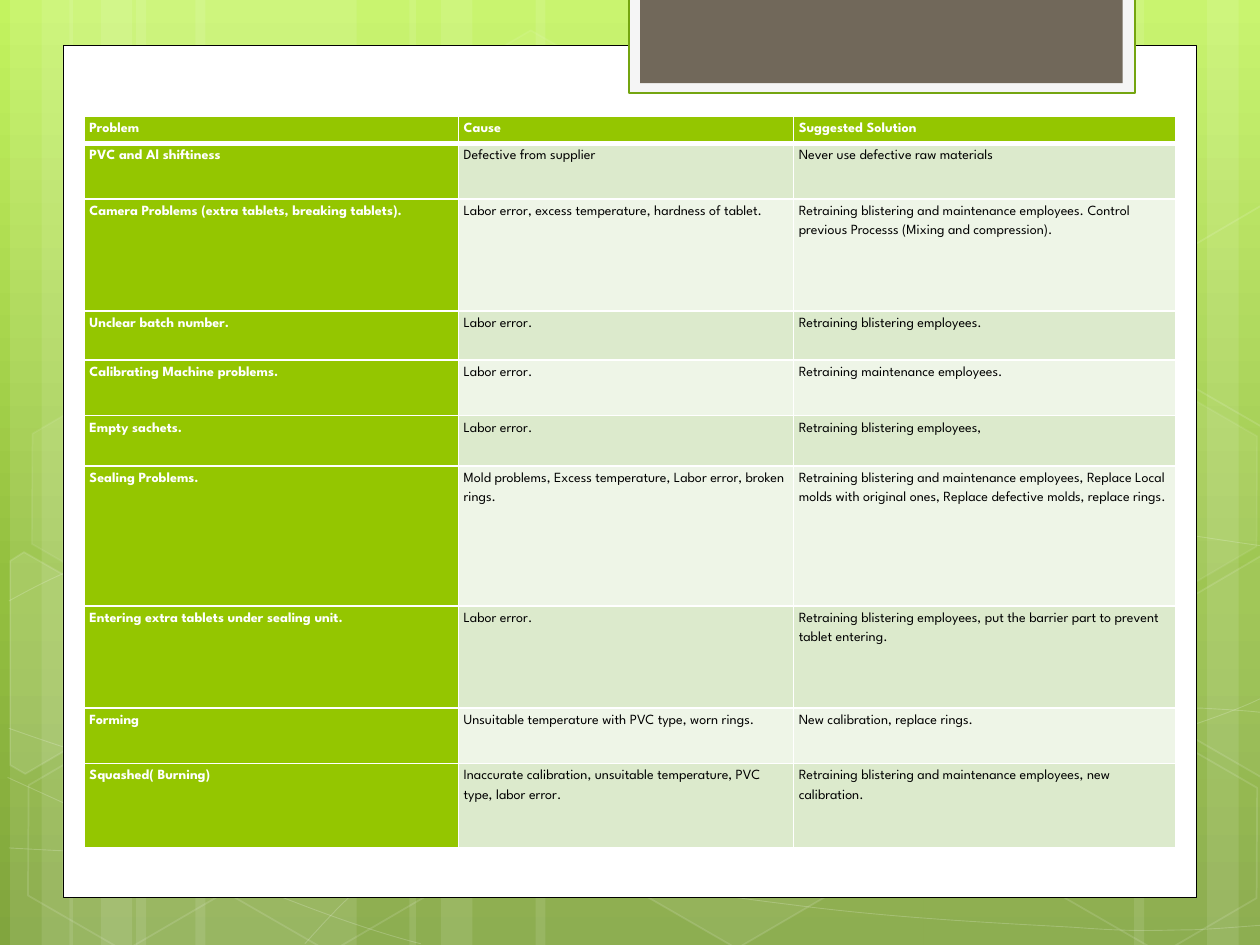
from dataclasses import dataclass
from math import cos, radians, sin

from lxml import etree
from pptx import Presentation
from pptx.dml.color import RGBColor
from pptx.enum.shapes import MSO_SHAPE
from pptx.oxml.ns import qn
from pptx.util import Inches, Pt

RECT, HEXAGON = MSO_SHAPE.RECTANGLE, MSO_SHAPE.HEXAGON
FONT = "League Spartan"
WHITE, BLACK, GREEN = "FFFFFF", "000000", "94C600"
BANDS = ("DCEACC", "EEF5E7")
BACKGROUND = ((0, "C3F35F"), (62, "93BF3F"), (100, "81A53E"))
TILT = 30


@dataclass
class Hexagon:
    left: float
    top: float
    fill: int  # opacity in percent, 0 for no fill
    line: int


@dataclass
class CutHexagon:
    center: tuple
    points: list  # corners as seen on the slide
    fill: int


@dataclass
class Curve:
    points: list  # start, then two control points and an end point per segment
    straight: int = 0  # index of an end point reached by a straight line


# Vertical light bars: left, width, rotation
BARS = [(1.08, 1.75, 0), (0.08, 0.5, 0), (0.33, 0.83, 0), (1.55, 1.75, 0), (0.55, 0.5, 0),
        (0.8, 0.83, 0), (7.33, 1.75, 180), (9.58, 0.5, 180), (9, 0.83, 180),
        (4.25, 3.08, 0), (3.25, 0.5, 0), (3.5, 0.83, 0)]

CURVES = [
    Curve([(0.07, 6.73), (0.61, 6.76), (1.15, 6.79), (1.9, 6.78), (2.65, 6.77), (3.58, 6.75),
           (4.58, 6.65), (5.58, 6.55), (7, 6.36), (7.92, 6.17), (8.83, 5.98), (9.77, 5.68),
           (10.07, 5.51)]),
    Curve([(0.07, 4.77), (0.36, 4.61), (0.65, 4.46), (1.21, 4.31), (1.78, 4.16), (2.59, 3.94),
           (3.47, 3.87), (4.36, 3.8), (5.44, 3.79), (6.54, 3.87), (7.64, 3.95), (9.47, 4.26),
           (10.07, 4.34)]),
    Curve([(0.06, 6.17), (1.27, 6.72), (2.47, 7.27), (3.34, 7.49)]),
    Curve([(0.07, 5.78), (0.38, 5.89), (0.7, 6), (1.28, 6.16), (1.86, 6.31), (2.73, 6.56),
           (3.57, 6.73), (4.4, 6.9), (5.45, 7.08), (6.28, 7.18), (7.11, 7.29), (8, 7.33),
           (8.53, 7.36), (9.05, 7.4), (9.19, 7.38), (9.45, 7.38), (9.71, 7.37), (9.89, 7.35),
           (10.07, 7.34)]),
    Curve([(2.42, 7.49), (2.6, 7.29), (2.78, 7.09), (3.02, 6.91), (3.26, 6.73), (3.6, 6.53),
           (3.88, 6.39), (4.16, 6.25), (4.33, 6.19), (4.7, 6.09), (5.06, 5.99), (5.73, 5.85),
           (6.08, 5.78), (6.44, 5.71), (6.49, 5.71), (6.8, 5.69), (7.11, 5.66), (7.6, 5.63),
           (7.94, 5.62), (8.29, 5.61), (8.86, 5.62), (8.86, 5.62), (9.53, 5.62), (9.71, 5.63),
           (9.88, 5.64), (9.97, 5.65), (10.06, 5.66), (10.03, 5.65), (10.06, 5.66)], 22),
]

# Whole hexagons and those cut by the slide edge, back to front
CELLS = [
    Hexagon(3.34, 0.36, 4, 8),
    Hexagon(4.97, 5.89, 6, 12),
    CutHexagon((0.36, 5.35), [(0.08, 4.45), (0.19, 4.38), (0.96, 4.82), (0.95, 5.7),
                              (0.2, 6.14), (0.08, 6.07)], 10),
    Hexagon(0.11, 5.91, 0, 12),
    Hexagon(0.14, 3.12, 7, 8),
    Hexagon(1.74, 5.92, 0, 12),
    Hexagon(7.53, 4.53, 10, 12),
    Hexagon(8.34, 5.93, 0, 12),
    Hexagon(8.34, 3.14, 7, 8),
    CutHexagon((9.85, 5.2), [(9.26, 4.85), (10.01, 4.41), (10.09, 4.46), (10.09, 6.13),
                             (10.02, 6.17), (9.26, 5.73)], 4),
    CutHexagon((9.85, 2.41), [(9.26, 2.07), (10.01, 1.63), (10.1, 1.68), (10.09, 3.35),
                              (10.02, 3.39), (9.26, 2.95)], 0),
]

COLUMNS = (2.97, 2.66, 3.03)
ROWS = [  # height, cell texts
    (0.22, "Problem", "Cause", "Suggested Solution"),
    (0.44, "PVC and Al shiftiness", "Defective from supplier",
     "Never use defective raw materials"),
    (0.89, "Camera Problems (extra tablets, breaking tablets).",
     "Labor error, excess temperature, hardness of tablet.",
     "Retraining blistering and maintenance employees. Control previous Processs "
     "(Mixing and compression)."),
    (0.39, "Unclear batch number.", "Labor error.", "Retraining blistering employees."),
    (0.44, "Calibrating Machine problems.", "Labor error.",
     "Retraining maintenance employees."),
    (0.4, "Empty sachets.", "Labor error.", "Retraining blistering employees,"),
    (1.11, "Sealing Problems.",
     "Mold problems, Excess temperature, Labor error, broken rings.",
     "Retraining blistering and maintenance employees, Replace Local molds with original "
     "ones, Replace defective molds, replace rings."),
    (0.81, "Entering extra tablets under sealing unit.", "Labor error.",
     "Retraining blistering employees, put the barrier part to prevent tablet entering."),
    (0.44, "Forming", "Unsuitable temperature with PVC type, worn rings.",
     "New calibration, replace rings."),
    (0.67, "Squashed( Burning)",
     "Inaccurate calibration, unsuitable temperature, PVC type, labor error.",
     "Retraining blistering and maintenance employees, new calibration."),
]


def paint(fill, color: str, opacity: int = 100) -> None:
    fill.solid()
    fill.fore_color.rgb = RGBColor.from_string(color)
    if opacity < 100:
        clr = fill._xPr.find(qn("a:solidFill"))[0]
        etree.SubElement(clr, qn("a:alpha")).set("val", str(opacity * 1000))


def style(sp, fill="", fill_opacity=100, line="", width=1.0, line_opacity=100) -> None:
    sp.shadow.inherit = False
    if fill and fill_opacity:
        paint(sp.fill, fill, fill_opacity)
    else:
        sp.fill.background()
    if line:
        sp.line.width = Pt(width)
        paint(sp.line.fill, line, line_opacity)
    else:
        sp.line.fill.background()


def add_box(s, kind, left: float, top: float, width: float, height: float):
    return s.shapes.add_shape(kind, Inches(left), Inches(top), Inches(width), Inches(height))


def add_outline(s, points: list, close: bool):
    emu = [(Inches(x), Inches(y)) for x, y in points]
    builder = s.shapes.build_freeform(*emu[0])
    builder.add_line_segments(emu[1:], close=close)
    return builder.convert_to_shape()


def add_curve(s, curve: Curve) -> None:
    """Draw the points as lines, then join each three into one cubic segment."""
    sp = add_outline(s, curve.points, False)
    lines = list(sp._element.iter(qn("a:lnTo")))
    i = 0
    while i < len(lines):
        if i + 1 == curve.straight:
            i += 1
            continue
        first, *others = lines[i:i + 3]
        first.tag = qn("a:cubicBezTo")
        for ln in others:
            first.append(ln[0])
            ln.getparent().remove(ln)
        i += 3
    style(sp, line=WHITE, width=0.5, line_opacity=20)


def add_cut_hexagon(s, c: CutHexagon) -> None:
    """Turn the corners back, so that the tilt of the shape restores them."""
    (cx, cy), co, si = c.center, cos(radians(TILT)), sin(radians(TILT))
    upright = [(cx + (x - cx) * co + (y - cy) * si, cy - (x - cx) * si + (y - cy) * co)
               for x, y in c.points]
    sp = add_outline(s, upright, True)
    sp.rotation = TILT
    style(sp, WHITE, c.fill, WHITE, 1, 12)


def add_hexagon(s, c: Hexagon) -> None:
    sp = add_box(s, HEXAGON, c.left, c.top, 1.75, 1.52)
    sp.adjustments[0] = 0.285
    sp.rotation = TILT
    style(sp, WHITE, c.fill, WHITE, 1, c.line)


def set_background(s) -> None:
    fill = s.background.fill
    fill.gradient()
    fill.gradient_angle = 270
    stops = fill._fill._gradFill.find(qn("a:gsLst"))
    for old in list(stops):
        stops.remove(old)
    for pos, color in BACKGROUND:
        gs = etree.SubElement(stops, qn("a:gs"), pos=str(pos * 1000))
        etree.SubElement(gs, qn("a:srgbClr"), val=color)


def set_border(cell, side: str, width: float) -> None:
    ln = etree.SubElement(cell._tc.get_or_add_tcPr(), qn("a:ln" + side), w=str(Pt(width)))
    etree.SubElement(etree.SubElement(ln, qn("a:solidFill")), qn("a:srgbClr"), val=WHITE)


def fill_cell(cell, text: str, row: int, col: int) -> None:
    heading = row == 0 or col == 0
    cell.margin_left = cell.margin_right = Inches(0.04)
    cell.margin_top = cell.margin_bottom = 0
    for side in "LRTB":
        set_border(cell, side, 3 if (row, side) in ((0, "B"), (1, "T")) else 1)
    paint(cell.fill, GREEN if heading else BANDS[(row - 1) % 2])
    p = cell.text_frame.paragraphs[0]
    p.text = text
    p.line_spacing = 1.5
    font = p.runs[0].font
    font.name, font.size, font.bold = FONT, Pt(8), heading
    font.color.rgb = RGBColor.from_string(WHITE if heading else BLACK)


def add_problem_table(s) -> None:
    table = s.shapes.add_table(len(ROWS), len(COLUMNS), Inches(0.67), Inches(0.92),
                               Inches(sum(COLUMNS)), Inches(sum(r[0] for r in ROWS))).table
    table.first_col = True
    for column, width in zip(table.columns, COLUMNS):
        column.width = Inches(width)
    for i, (height, *texts) in enumerate(ROWS):
        table.rows[i].height = Inches(height)
        for j, text in enumerate(texts):
            fill_cell(table.cell(i, j), text, i, j)


def main() -> None:
    prs = Presentation()
    prs.slide_width, prs.slide_height = Inches(10), Inches(7.5)
    s = prs.slides.add_slide(prs.slide_layouts[6])

    # Backdrop
    set_background(s)
    for left, width, rotation in BARS:
        bar = add_box(s, RECT, left, 0, width, 7.5)
        bar.rotation = rotation
        style(bar, WHITE, 10)
    for curve in CURVES:
        add_curve(s, curve)
    for c in CELLS:
        (add_hexagon if isinstance(c, Hexagon) else add_cut_hexagon)(s, c)

    # White page and the tab at its top
    style(add_box(s, RECT, 0.5, 0.36, 9, 6.76), WHITE, line=BLACK, width=0.5)
    style(add_box(s, RECT, 4.99, -0.02, 4.02, 0.76), "F5F5F5", line="74A510", width=1.25)
    style(add_box(s, RECT, 5.08, -0.02, 3.83, 0.68), "71685A")

    add_problem_table(s)
    prs.save("out.pptx")


if __name__ == "__main__":
    main()
